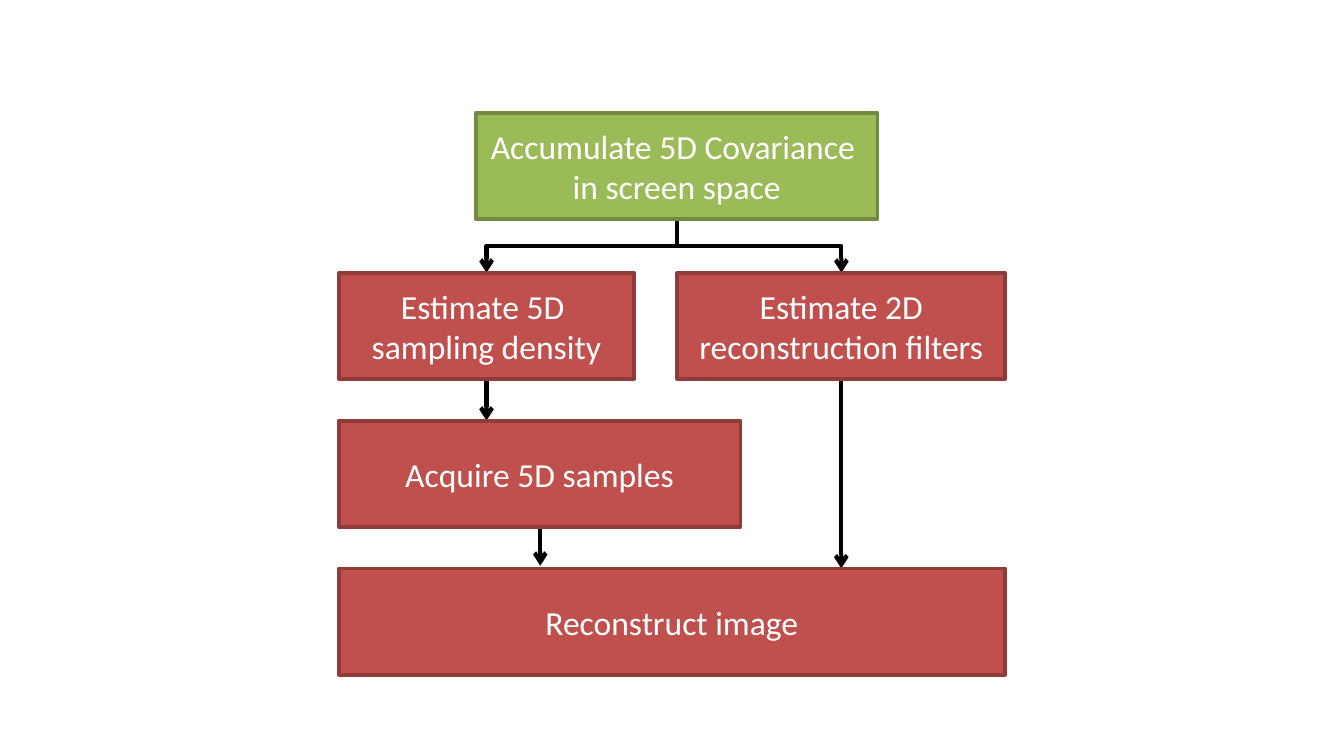
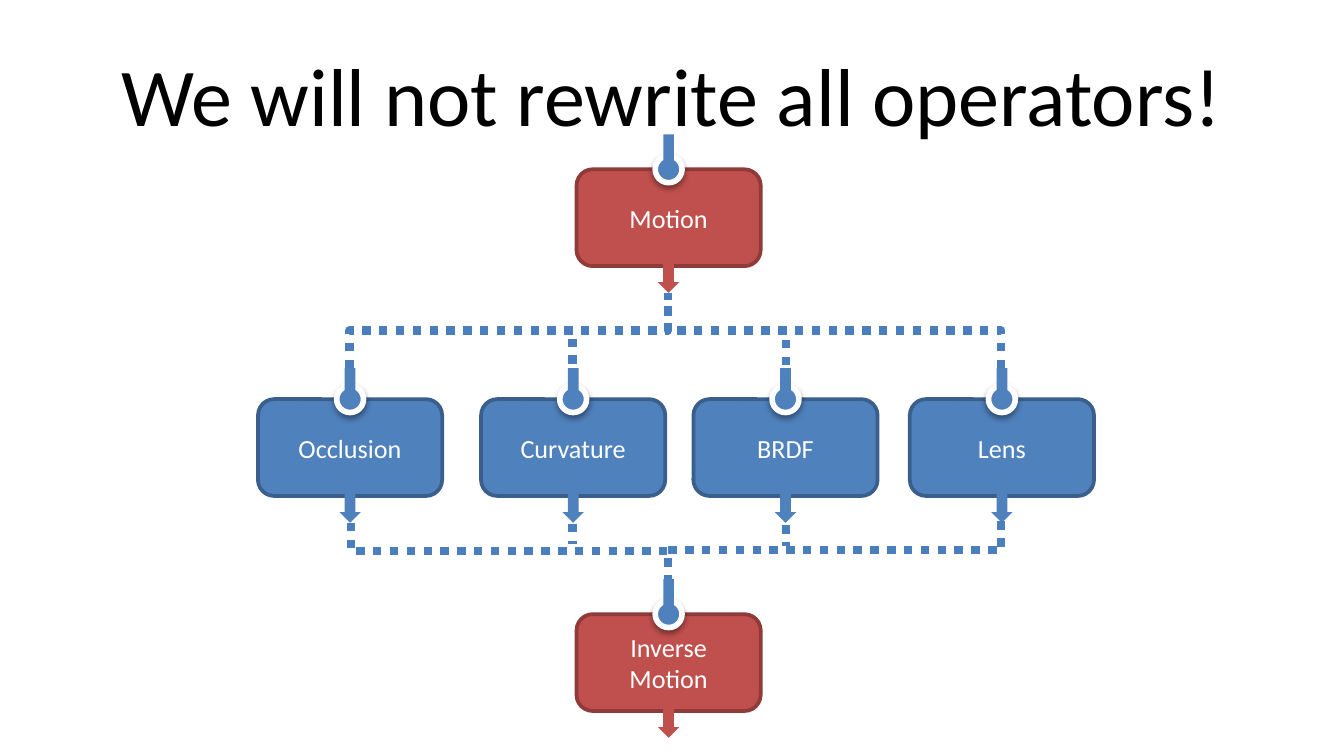
"""Build the covariance pipeline and operator diagram slides."""
from typing import NamedTuple

from lxml import etree
from pptx import Presentation
from pptx import util as u
from pptx.dml.color import RGBColor
from pptx.enum import dml, shapes, text
from pptx.oxml.ns import qn

WHITE = RGBColor(0xFF, 0xFF, 0xFF)
BLACK = RGBColor(0x00, 0x00, 0x00)
GREEN = RGBColor(0x9B, 0xBB, 0x59)
GREEN_EDGE = RGBColor(0x73, 0x8A, 0x42)
RED = RGBColor(0xC0, 0x50, 0x4D)
RED_EDGE = RGBColor(0x8E, 0x3B, 0x39)
BLUE = RGBColor(0x4F, 0x81, 0xBD)
BLUE_EDGE = RGBColor(0x3A, 0x5F, 0x8C)
DOT_BLUE = RGBColor(0x4B, 0x7E, 0xBC)
EDGES = {GREEN: GREEN_EDGE, RED: RED_EDGE, BLUE: BLUE_EDGE}

Kind = shapes.MSO_SHAPE
SLIDE_WIDTH = u.Inches(10)
SLIDE_HEIGHT = SLIDE_WIDTH * 9 // 16
STEP_HEIGHT = 0.79
OPERATOR_WIDTH, OPERATOR_HEIGHT = 1.37, 0.72


class Step(NamedTuple):
    """A pipeline stage on the first slide."""
    label: str
    left: float
    top: float
    width: float
    fill: RGBColor = RED


class Operator(NamedTuple):
    """An operator block with its input plug and output arrow."""
    label: str
    left: float
    top: float
    fill: RGBColor = BLUE
    stem_rise: float = 0.23


class Link(NamedTuple):
    """A connection between two points, straight when they align."""
    x1: float
    y1: float
    x2: float
    y2: float


STEPS = [
    Step("Accumulate 5D Covariance \nin screen space", 3.54, 0.84, 2.99, GREEN),
    Step("Estimate 5D \nsampling density", 2.52, 2.03, 2.2),
    Step("Estimate 2D reconstruction filters", 5.04, 2.03, 2.44),
    Step("Reconstruct image", 2.52, 4.23, 4.96),
    Step("Acquire 5D samples", 2.52, 3.13, 2.99),
]
STEP_LINKS = [
    Link(5.04, 1.63, 3.62, 2.03),
    Link(5.04, 1.63, 6.26, 2.03),
    Link(3.62, 2.81, 3.62, 3.13),
    Link(6.26, 2.82, 6.26, 4.23),
    Link(4.02, 3.89, 4.02, 4.21),
]
OPERATORS = [
    Operator("Occlusion", 1.92, 2.97),
    Operator("Curvature", 3.58, 2.97),
    Operator("BRDF", 5.16, 2.97),
    Operator("Lens", 6.77, 2.97),
    Operator("Motion", 4.29, 1.26, RED, 0.26),
    Operator("Inverse Motion", 4.29, 4.57, RED, 0.26),
]
INNER_LINKS = [Link(4.26, 2.52, 4.26, 4.05), Link(5.85, 2.53, 5.85, 4.06)]
OUTER_LINKS = [
    Link(2.61, 3.89, 4.97, 4.31),
    Link(2.6, 2.74, 4.97, 2.18),
    Link(7.45, 2.74, 4.97, 2.18),
    Link(7.45, 3.88, 4.97, 4.31),
]


def write(frame, words: str, size: float, color: RGBColor) -> None:
    """Fill a text frame with centred paragraphs."""
    frame.word_wrap = True
    frame.vertical_anchor = text.MSO_ANCHOR.MIDDLE
    frame.text = words
    look = {"name": "Calibri", "size": u.Pt(size)}
    for paragraph in frame.paragraphs:
        paragraph.alignment = text.PP_ALIGN.CENTER
        for run in paragraph.runs:
            for key, value in look.items():
                setattr(run.font, key, value)
            run.font.color.rgb = color


def add_block(slide, kind: Kind, left: float, top: float, width: float, height: float,
              fill: RGBColor, edge: RGBColor | None = None, edge_width: float = 2):
    """Draw a filled shape, outlined only when an edge colour is given."""
    block = slide.shapes.add_shape(kind, *map(u.Inches, (left, top, width, height)))
    block.shadow.inherit = False
    block.fill.solid()
    block.fill.fore_color.rgb = fill
    if edge is None:
        block.line.fill.background()
    else:
        block.line.color.rgb = edge
        block.line.width = u.Pt(edge_width)
    return block


def add_link(slide, link: Link, color: RGBColor, width: float, dotted: bool = False) -> None:
    """Draw a dotted line or an arrow that leaves and arrives vertically."""
    x1, y1, x2, y2 = link
    dx, dy = x2 - x1, y2 - y1
    kind, ends = shapes.MSO_CONNECTOR.STRAIGHT, link
    turn = 0
    if dx:
        kind = shapes.MSO_CONNECTOR.ELBOW
        turn = 90 if dx * dy < 0 else 270
        sign = 1 if turn == 90 else -1
        cx, cy = (x1 + x2) / 2, (y1 + y2) / 2
        ends = (cx - sign * dy / 2, cy + sign * dx / 2,
                cx + sign * dy / 2, cy - sign * dx / 2)
    connector = slide.shapes.add_connector(kind, *map(u.Inches, ends))
    connector.line.color.rgb = color
    connector.line.width = u.Pt(width)
    properties = connector._element.spPr
    if turn:
        properties.find(qn("a:xfrm")).set("rot", str(turn * 60000))
    if dotted:
        connector.line.dash_style = dml.MSO_LINE.ROUND_DOT
    else:
        etree.SubElement(properties.find(qn("a:ln")), qn("a:tailEnd"), type="arrow")
    etree.SubElement(properties, qn("a:effectLst"))


def add_soft_shadow(shape) -> None:
    """Give a shape a soft shadow falling straight down."""
    effects = shape._element.spPr.find(qn("a:effectLst"))
    shadow = etree.SubElement(
        effects, qn("a:outerShdw"), blurRad=str(u.Pt(3.1)), dist=str(u.Pt(1.6)),
        dir="5400000", rotWithShape="0")
    tint = etree.SubElement(shadow, qn("a:srgbClr"), val=str(BLACK))
    etree.SubElement(tint, qn("a:alpha"), val="38000")


def add_step(slide, step: Step) -> None:
    """Draw one pipeline stage."""
    block = add_block(slide, Kind.RECTANGLE, step.left, step.top, step.width,
                      STEP_HEIGHT, step.fill, EDGES[step.fill])
    write(block.text_frame, step.label, 18, WHITE)


def add_operator(slide, operator: Operator) -> None:
    """Draw one operator with its plug, output arrow and stem."""
    label, left, top, fill, stem_rise = operator
    center = left + OPERATOR_WIDTH / 2
    block = add_block(slide, Kind.ROUNDED_RECTANGLE, left, top, OPERATOR_WIDTH,
                      OPERATOR_HEIGHT, fill, EDGES[fill])
    write(block.text_frame, label, 14, WHITE)
    plug = add_block(slide, Kind.OVAL, center - 0.1, top - 0.1, 0.2, 0.2, BLUE, WHITE, 3)
    add_soft_shadow(plug)
    add_block(slide, Kind.DOWN_ARROW, center - 0.08, top + 0.65, 0.16, 0.27, fill)
    add_block(slide, Kind.RECTANGLE, center - 0.04, top - stem_rise, 0.08, 0.2, BLUE)


def build_pipeline(slide) -> None:
    """Lay out the sampling and reconstruction pipeline."""
    for link in STEP_LINKS:
        add_link(slide, link, BLACK, 2.25)
    for step in STEPS:
        add_step(slide, step)


def build_operators(slide) -> None:
    """Lay out the operators between motion and inverse motion."""
    for link in INNER_LINKS:
        add_link(slide, link, DOT_BLUE, 4.5, dotted=True)
    title = slide.shapes.add_textbox(*map(u.Inches, (0.5, 0.23, 9, 0.94)))
    write(title.text_frame, "We will not rewrite all operators!", 44, BLACK)
    for operator in OPERATORS:
        add_operator(slide, operator)
    for link in OUTER_LINKS:
        add_link(slide, link, DOT_BLUE, 4.5, dotted=True)


def main() -> None:
    """Create both slides and save the presentation."""
    deck = Presentation()
    deck.slide_width, deck.slide_height = SLIDE_WIDTH, SLIDE_HEIGHT
    for build in (build_pipeline, build_operators):
        build(deck.slides.add_slide(deck.slide_layouts[6]))
    deck.save("out.pptx")


if __name__ == "__main__":
    main()
